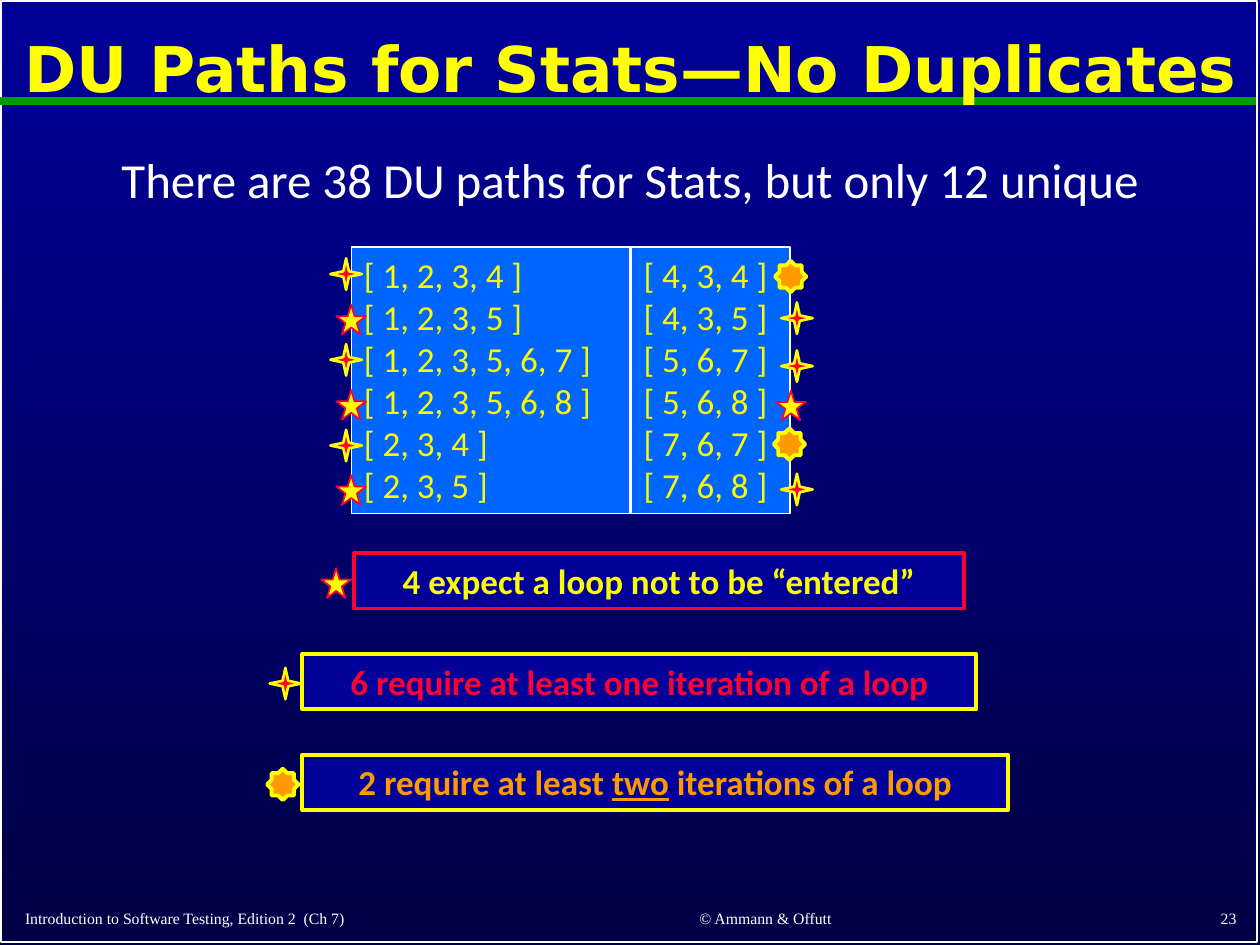
"""Build the slide on unique DU paths for Stats."""
from lxml import etree
from pptx import Presentation
from pptx.dml.color import RGBColor
from pptx.enum import shapes, text
from pptx.oxml import ns
from pptx.util import Pt

WHITE = RGBColor(0xFF, 0xFF, 0xFF)
NAVY = RGBColor(0x00, 0x00, 0x99)
DARK_NAVY = RGBColor(0x00, 0x00, 0x45)
BLUE = RGBColor(0x00, 0x66, 0xFF)
GREEN = RGBColor(0x00, 0x99, 0x00)
YELLOW = RGBColor(0xFF, 0xFF, 0x00)
PALE_YELLOW = RGBColor(0xFA, 0xFD, 0x00)
RED = RGBColor(0xFF, 0x00, 0x33)
ORANGE = RGBColor(0xFF, 0x99, 0x00)

SHAPE = shapes.MSO_SHAPE
LEFT, CENTER, RIGHT = text.PP_ALIGN.LEFT, text.PP_ALIGN.CENTER, text.PP_ALIGN.RIGHT
TOP, MIDDLE = text.MSO_ANCHOR.TOP, text.MSO_ANCHOR.MIDDLE

FOOTER = {"name": "Times New Roman", "size": Pt(9)}
TITLE = {"name": "DejaVu Sans", "size": Pt(36), "bold": True}
SUBTITLE = {"name": "Calibri", "size": Pt(28)}
PATH = {"name": "Calibri", "size": Pt(20)}
NOTE = {**PATH, "bold": True}

MARKERS = {
    "skip": (SHAPE.STAR_5_POINT, 17, YELLOW, RED, 1, None),
    "once": (SHAPE.STAR_4_POINT, 18, RED, YELLOW, 1.5, 0.125),
    "twice": (SHAPE.STAR_8_POINT, 18, ORANGE, YELLOW, 2.25, 0.383),
}
LEFT_PATHS = ["[ 1, 2, 3, 4 ]", "[ 1, 2, 3, 5 ]", "[ 1, 2, 3, 5, 6, 7 ]",
              "[ 1, 2, 3, 5, 6, 8 ]", "[ 2, 3, 4 ]", "[ 2, 3, 5 ]"]
RIGHT_PATHS = ["[ 4, 3, 4 ]", "[ 4, 3, 5 ]", "[ 5, 6, 7 ]",
               "[ 5, 6, 8 ]", "[ 7, 6, 7 ]", "[ 7, 6, 8 ]"]
RIGHT_MARKERS = [("twice", 442.8, 149), ("once", 446.4, 172.8),
                 ("once", 446.4, 200.2), ("skip", 443.5, 223.2),
                 ("twice", 442.1, 244.8), ("once", 446.4, 270.7)]
NOTES = [
    (202.3, 316.1, 348.5, RED, PALE_YELLOW,
     ["4 expect a loop not to be “entered”"], ("skip", 183.6, 324.7)),
    (172.8, 373.7, 385.2, YELLOW, RED,
     ["6 require at least one iteration of a loop"], ("once", 154.1, 381.6)),
    (172.8, 431.3, 403.2, YELLOW, ORANGE,
     ["2 require at least ", "two", " iterations of a loop"],
     ("twice", 152.6, 439.2)),
]


def set_values(target, values):
    """Set each named attribute of the target."""
    for name, value in values.items():
        setattr(target, name, value)


def write(shape, paragraphs, font, color, align=LEFT, anchor=TOP,
          wrap=True, spacing=1.0):
    """Write paragraphs, each a list of runs whose odd ones are underlined."""
    frame = shape.text_frame
    set_values(frame, {"word_wrap": wrap, "vertical_anchor": anchor})
    for index, pieces in enumerate(paragraphs):
        paragraph = frame.add_paragraph() if index else frame.paragraphs[0]
        set_values(paragraph, {"alignment": align, "line_spacing": spacing})
        for position, piece in enumerate(pieces):
            run = paragraph.add_run()
            run.text = piece
            set_values(run.font, font)
            run.font.color.rgb = color
            if position % 2:
                run.font.underline = True


def add_label(slide, box, words, font, color, **layout):
    """Add a one-paragraph text box."""
    textbox = slide.shapes.add_textbox(*map(Pt, box))
    write(textbox, [[words]], font, color, **layout)


def add_figure(slide, kind, box, fill, line, weight):
    """Add a preset shape, unfilled when fill is None."""
    shape = slide.shapes.add_shape(kind, *map(Pt, box))
    shape.shadow.inherit = False
    if fill is None:
        shape.fill.background()
    else:
        shape.fill.solid()
        shape.fill.fore_color.rgb = fill
    shape.line.color.rgb = line
    shape.line.width = Pt(weight)
    return shape


def add_marker(slide, name, left, top):
    """Add the star that stands for a kind of loop use."""
    kind, size, fill, line, weight, adjustment = MARKERS[name]
    star = add_figure(slide, kind, (left, top, size, size), fill, line, weight)
    if adjustment is not None:
        star.adjustments[0] = adjustment


def add_path_list(slide, left, width, paths):
    """Add a blue box listing DU paths."""
    panel = add_figure(slide, SHAPE.RECTANGLE, (left, 141.1, width, 152.4),
                       BLUE, WHITE, 1)
    write(panel, [[path] for path in paths], PATH, PALE_YELLOW)


def add_note(slide, left, top, width, line, color, pieces, marker):
    """Add a framed statement with its marker."""
    panel = add_figure(slide, SHAPE.RECTANGLE, (left, top, width, 31.7),
                       NAVY, line, 2.25)
    write(panel, [pieces], NOTE, color, align=CENTER)
    add_marker(slide, *marker)


def add_rule(slide, top, width):
    """Add the green line below the title."""
    rule = slide.shapes.add_connector(shapes.MSO_CONNECTOR.STRAIGHT, Pt(0),
                                      Pt(top), Pt(width), Pt(top))
    rule.line.color.rgb = GREEN
    rule.line.width = Pt(4.5)
    etree.SubElement(rule._element.spPr, ns.qn("a:effectLst"))


def paint_background(slide):
    """Fill the background with a downward gradient."""
    fill = slide.background.fill
    fill.gradient()
    fill.gradient_angle = 270
    for stop, color in zip(fill.gradient_stops, (NAVY, DARK_NAVY)):
        stop.color.rgb = color


def main():
    """Build and save the slide."""
    presentation = Presentation()
    set_values(presentation, {"slide_width": Pt(720), "slide_height": Pt(540)})
    slide = presentation.slides.add_slide(presentation.slide_layouts[6])
    paint_background(slide)
    add_figure(slide, SHAPE.RECTANGLE, (0.7, 0.7, 717.8, 537.8), None, WHITE, 1)
    add_rule(slide, 57.6, 717.8)

    for left, width, words, align in (
            (7.2, 295.9, "Introduction to Software Testing, Edition 2  (Ch 7)", LEFT),
            (323.3, 228.2, "© Ammann & Offutt", CENTER),
            (563.8, 149.8, "23", RIGHT)):
        add_label(slide, (left, 515.2, width, 19), words, FOOTER, WHITE,
                  align=align, anchor=MIDDLE)
    add_label(slide, (5.8, 7.9, 709.2, 66.2), "DU Paths for Stats—No Duplicates",
              TITLE, YELLOW, align=CENTER, anchor=MIDDLE, spacing=0.9)
    add_label(slide, (10.8, 85.7, 698.4, 46.1),
              "There are 38 DU paths for Stats, but only 12 unique",
              SUBTITLE, WHITE, align=CENTER, spacing=0.9)

    add_path_list(slide, 200.9, 159.1, LEFT_PATHS)
    add_path_list(slide, 360.7, 90.7, RIGHT_PATHS)
    for pair in range(3):
        add_marker(slide, "once", 188.8, 147.6 + 49 * pair)
        add_marker(slide, "skip", 192.2, 174.2 + 48.7 * pair)
    for marker in RIGHT_MARKERS:
        add_marker(slide, *marker)
    for note in NOTES:
        add_note(slide, *note)
    presentation.save("out.pptx")


if __name__ == "__main__":
    main()
